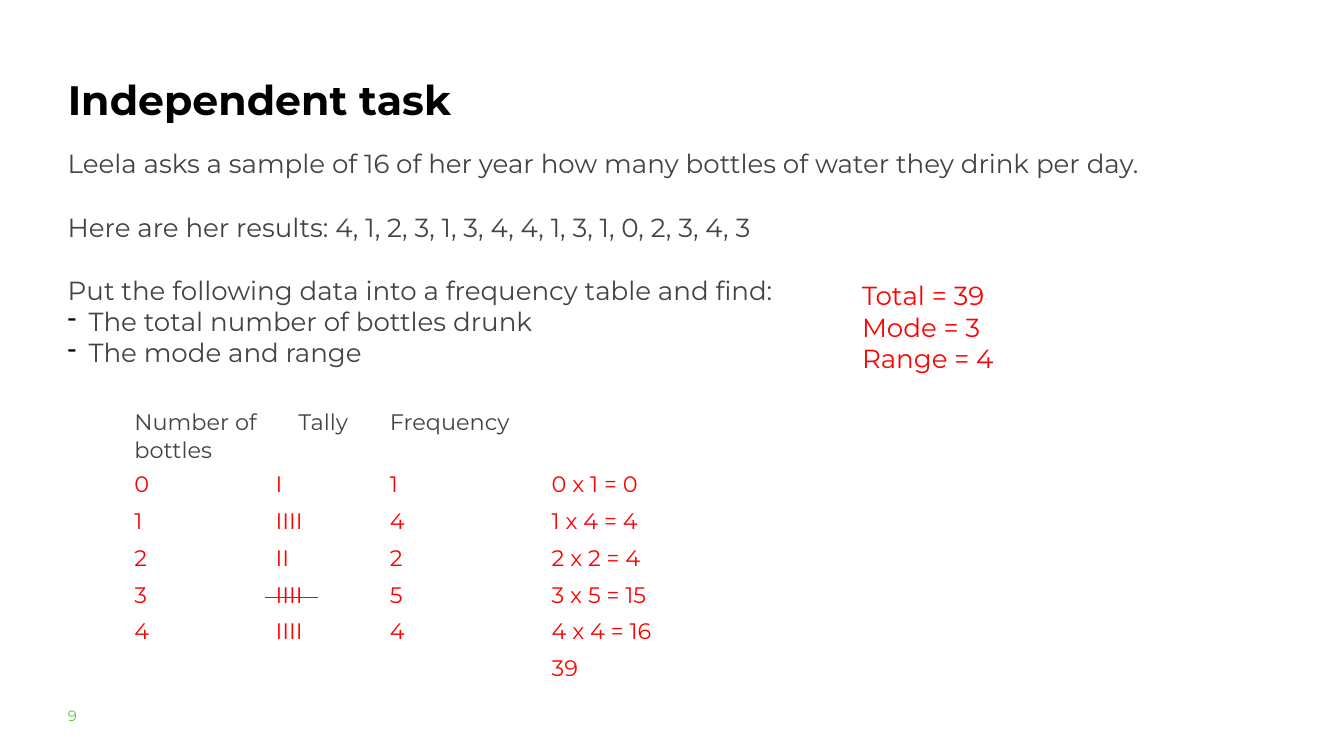
from lxml import etree
from pptx import Presentation, util as u
from pptx.dml.color import RGBColor
from pptx.enum import shapes
from pptx.oxml import ns

FONT = "Montserrat"
BLACK, GREY, RED, GREEN = "000000", "434343", "FF0000", "65BE4B"
LEFT = 0.91
BODY_SIZE, TABLE_SIZE = 28, 24
BLANK_LINE = 34

RESULTS = [4, 1, 2, 3, 1, 3, 4, 4, 1, 3, 1, 0, 2, 3, 4, 3]
TALLIES = ["I", "IIII", "II", "IIII", "IIII"]
COLUMNS = [2.1, 1.7, 2.41, 2.41]
HEADER_HEIGHT, ROW_HEIGHT = 0.91, 0.55
STRUCK_ROW = 4


def color(value):
    return RGBColor.from_string(value)


def style(p, size, ink, bold=False):
    for r in p.runs:
        r.font.name = FONT
        r.font.size = u.Pt(size)
        r.font.bold = bold
        r.font.color.rgb = color(ink)


def indent(p, left, first=0):
    pPr = p._p.get_or_add_pPr()
    pPr.set("marL", str(u.Inches(left)))
    pPr.set("indent", str(u.Inches(first)))
    return pPr


def add_dash(p):
    pPr = indent(p, 0.31, -0.31)
    clr = etree.SubElement(pPr, ns.qn("a:buClr"))
    etree.SubElement(clr, ns.qn("a:srgbClr"), val=BLACK)
    etree.SubElement(pPr, ns.qn("a:buChar"), char="-")


def add_text(s, box, lines, size, ink, bold=False, spacing=None):
    tf = s.shapes.add_textbox(*map(u.Inches, box)).text_frame
    tf.word_wrap = True
    tf.text = "\n".join(lines)
    for p in tf.paragraphs:
        if spacing:
            p.line_spacing = spacing
        style(p, size, ink, bold)
    return tf.paragraphs


def add_question(s, box):
    intro = [
        "Leela asks a sample of 16 of her year how many bottles of water they drink per day.",
        "Here are her results: " + ", ".join(map(str, RESULTS)),
        "Put the following data into a frequency table and find:",
    ]
    tasks = ["The total number of bottles drunk", "The mode and range"]
    paragraphs = add_text(s, box, intro + tasks, BODY_SIZE, GREY)
    for p in paragraphs[1:len(intro)]:
        p.space_before = u.Pt(BLANK_LINE)
    for p in paragraphs[len(intro):]:
        add_dash(p)


def frequency_rows():
    rows = [["Number of bottles", "Tally", "Frequency", ""]]
    for bottles, tally in enumerate(TALLIES):
        count = RESULTS.count(bottles)
        rows.append([str(bottles), tally, str(count),
                     f"{bottles} x {count} = {bottles * count}"])
    return rows + [["", "", "", str(sum(RESULTS))]]


def add_frequency_table(s, left, top):
    rows = frequency_rows()
    heights = [HEADER_HEIGHT] + [ROW_HEIGHT] * (len(rows) - 1)
    frame = s.shapes.add_table(len(rows), len(COLUMNS), *map(
        u.Inches, (left, top, sum(COLUMNS), sum(heights))))
    table = frame.table
    table.first_row = table.horz_banding = False
    for column, width in zip(table.columns, COLUMNS):
        column.width = u.Inches(width)
    for i, (row, height) in enumerate(zip(rows, heights)):
        table.rows[i].height = u.Inches(height)
        for j, value in enumerate(row):
            cell = table.cell(i, j)
            cell.fill.background()
            cell.text = value
            style(cell.text_frame.paragraphs[0], TABLE_SIZE, RED if i else GREY)
    indent(table.cell(0, 1).text_frame.paragraphs[0], 0.34)

    # The stroke that completes a tally of five
    x = left + COLUMNS[0] - 0.05
    y = top + sum(heights[:STRUCK_ROW]) + 0.29
    stroke = s.shapes.add_connector(
        shapes.MSO_CONNECTOR.STRAIGHT, *map(u.Inches, (x, y, x + 0.78, y)))
    stroke.line.color.rgb = color(RED)
    stroke.line.width = u.Pt(0.75)
    etree.SubElement(stroke._element.spPr, ns.qn("a:effectLst"))


def main():
    prs = Presentation()
    prs.slide_width, prs.slide_height = u.Inches(20), u.Inches(11.25)
    s = prs.slides.add_slide(prs.slide_layouts[6])

    add_text(s, (LEFT, 0.84, 7.11, 0.98), ["Independent task"], 44, BLACK,
             bold=True, spacing=1.3)
    add_text(s, (LEFT, 10.38, 0.89, 0.42), ["9"], 16, GREEN, spacing=1.3)
    add_question(s, (LEFT, 2.15, 17.77, 5.28))
    add_frequency_table(s, 1.9, 6.04)
    add_text(s, (12.73, 4.11, 2.65, 1.51),
             ["Total = 39", "Mode = 3", "Range = 4"], BODY_SIZE, RED)
    prs.save("out.pptx")


if __name__ == "__main__":
    main()
